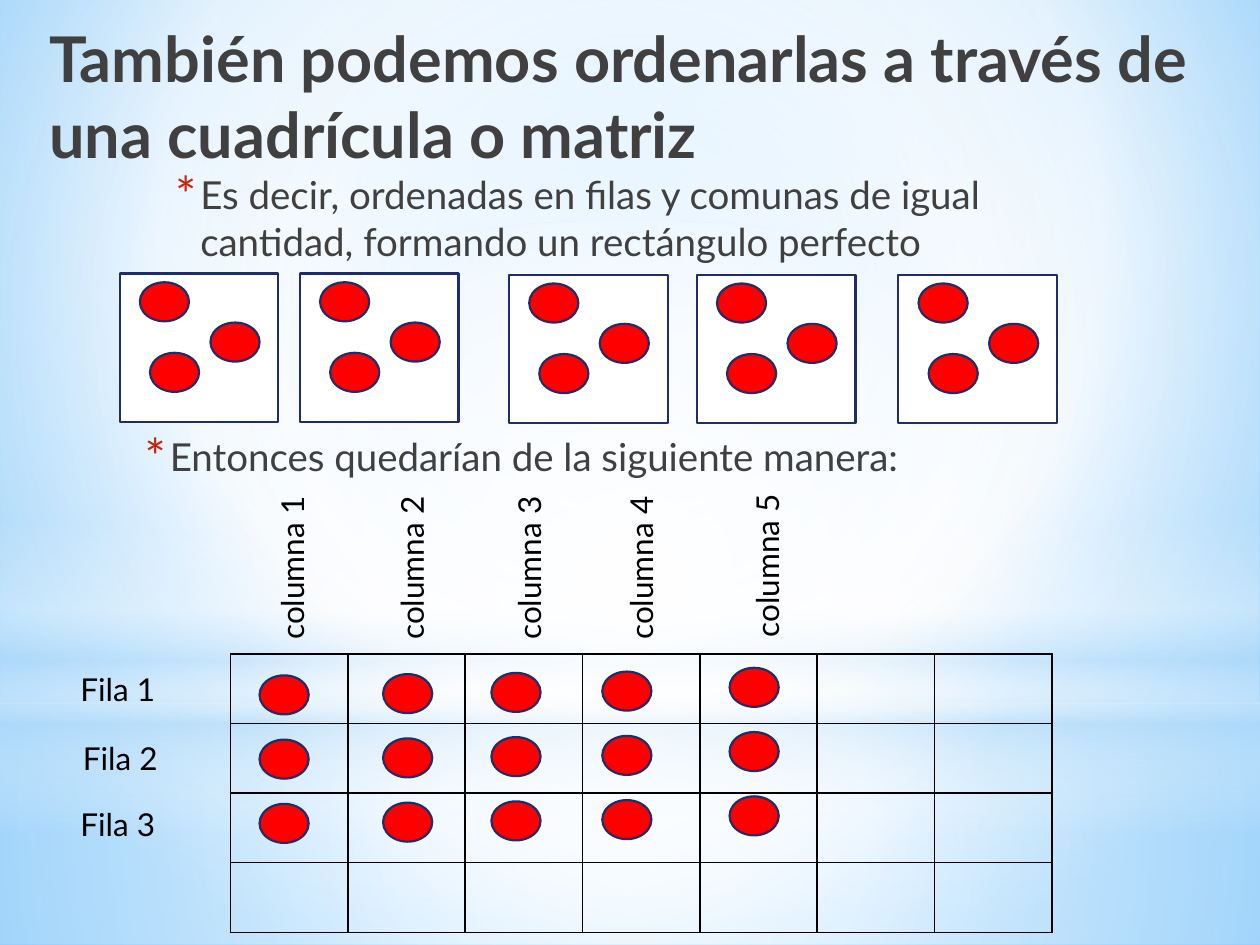
from lxml import etree
from pptx import Presentation
from pptx.dml.color import RGBColor
from pptx.enum.shapes import MSO_SHAPE
from pptx.enum.text import MSO_ANCHOR, MSO_AUTO_SIZE, PP_ALIGN
from pptx.oxml import parse_xml
from pptx.oxml.ns import nsdecls, qn
from pptx.util import Inches, Pt

RECTANGLE, OVAL = MSO_SHAPE.RECTANGLE, MSO_SHAPE.OVAL
TOP, MIDDLE = MSO_ANCHOR.TOP, MSO_ANCHOR.MIDDLE
NO_FIT = MSO_AUTO_SIZE.NONE
LEFT = PP_ALIGN.LEFT

THEME = {
    "font": "Lato", "title": 36, "body": 22, "label": 18,
    "text": "404040", "black": "000000", "bullet": "C3260C",
    "dot": "FF0000", "card": "FFFFFF", "outline": "1F2E69", "outline_width": 1.25,
}

TITLE = "También podemos ordenarlas a través de una cuadrícula o matriz"
INTRO = "Es decir, ordenadas en filas y comunas de igual cantidad, formando un rectángulo perfecto"
RESULT = "Entonces quedarían de la siguiente manera:"

# Gradient stops: position %, colour, opacity %
CENTRE = (50, 50, 50, 50)
BACKGROUND = ([(0, "9ED5FF", 100), (60, "FFFFFF", 100), (100, "5BB9FF", 100)], (20, 10, 20, 60))
BACKDROP = [
    (RECTANGLE, (0, 5.58, 10, 1.92),
     [(0, "FFFFFF", 91), (37, "FFFFFF", 76), (100, "B4DCFA", 79)], CENTRE),
    (RECTANGLE, (0, 0, 10, 5.58),
     [(0, "FFFFFF", 89), (48, "FFFFFF", 62), (100, "B4DCFA", 79)], CENTRE),
    (RECTANGLE, (0, 4.12, 10, 2.5),
     [(0, "FFFFFF", 0), (29, "FFFFFF", 30), (45, "B4DCFA", 40),
      (55, "FFFFFF", 26), (65, "B4DCFA", 60), (100, "FFFFFF", 0)], None),
    (OVAL, (0, 1.75, 10, 5.58), [(0, "FFFFFF", 100), (56, "FFFFFF", 0)], CENTRE),
]

CARD_SIZE = (1.26, 1.18)
CARDS = [(0.95, 2.17), (2.38, 2.17), (4.04, 2.18), (5.53, 2.18), (7.13, 2.18)]
DOTS_IN_CARD = [(0.16, 0.07), (0.72, 0.39), (0.24, 0.63)]
DOT_SIZE = (0.39, 0.31)

GRID_BOX = (1.83, 5.19, 6.52, 2.21)
GRID_ROWS, GRID_COLUMNS = 4, 7
DOT_COLUMNS = [(2.06, 5.36), (3.04, 5.35), (3.9, 5.34), (4.78, 5.33), (5.79, 5.3)]
DOT_ROW_STEP = 0.51
ROW_LABELS = [("Fila 1", 0.54, 5.27), ("Fila 2", 0.56, 5.82), ("Fila 3", 0.54, 6.34)]
COLUMN_LABELS = [
    ("columna 1", 1.59, 4.25), ("columna 2", 2.54, 4.25), ("columna 3", 3.47, 4.25),
    ("columna 4", 4.36, 4.25), ("columna 5", 5.36, 4.23),
]


def inches(box):
    return [Inches(length) for length in box]


def set_gradient(element, stops, focus):
    """Swap the element's solid fill for a circular gradient, or a vertical one without focus."""
    stop_xml = "".join(
        f'<a:gs pos="{position * 1000}"><a:srgbClr val="{color}">'
        f'<a:alpha val="{opacity * 1000}"/></a:srgbClr></a:gs>'
        for position, color, opacity in stops)
    if focus:
        sides = " ".join(f'{side}="{value * 1000}"' for side, value in zip("ltrb", focus))
        direction = f'<a:path path="circle"><a:fillToRect {sides}/></a:path>'
    else:
        direction = '<a:lin ang="5400000" scaled="0"/>'
    solid = element.find(".//" + qn("a:solidFill"))
    solid.getparent().replace(solid, parse_xml(
        f'<a:gradFill {nsdecls("a")} rotWithShape="1"><a:gsLst>{stop_xml}</a:gsLst>'
        f'{direction}</a:gradFill>'))


def add_backdrop(slide):
    slide.background.fill.solid()
    set_gradient(slide.background._cSld, *BACKGROUND)
    for layer, (kind, box, stops, focus) in enumerate(BACKDROP):
        shape = slide.shapes.add_shape(kind, *inches(box))
        shape.shadow.inherit = False
        shape.line.fill.background()
        shape.fill.solid()
        set_gradient(shape._element, stops, focus)
        slide.shapes._spTree.insert(2 + layer, shape._element)


def add_outlined(slide, kind, position, size, color):
    shape = slide.shapes.add_shape(kind, *inches(position + size))
    shape.shadow.inherit = False
    shape.fill.solid()
    shape.fill.fore_color.rgb = RGBColor.from_string(color)
    shape.line.color.rgb = RGBColor.from_string(THEME["outline"])
    shape.line.width = Pt(THEME["outline_width"])


def write(shape, box, text, size, color, anchor=TOP, bold=False):
    shape.left, shape.top, shape.width, shape.height = inches(box)
    frame = shape.text_frame
    frame.text = text
    frame.word_wrap = True
    frame.auto_size = NO_FIT
    frame.vertical_anchor = anchor
    paragraph = frame.paragraphs[0]
    paragraph.alignment = LEFT
    font = paragraph.font
    font.name, font.size, font.bold = THEME["font"], Pt(THEME[size]), bold
    font.color.rgb = RGBColor.from_string(THEME[color])
    return paragraph


def add_bullet(paragraph):
    paragraph.space_before = Pt(0.2 * THEME["body"])
    paragraph.space_after = Pt(3)
    properties = paragraph._p.get_or_add_pPr()
    properties.set("marL", str(Inches(0.25)))
    properties.set("indent", str(Inches(-0.2)))
    bullet = [
        f'<a:buClr {nsdecls("a")}><a:srgbClr val="{THEME["bullet"]}"/></a:buClr>',
        f'<a:buSzPct {nsdecls("a")} val="130000"/>',
        f'<a:buFont {nsdecls("a")} typeface="{THEME["font"]}"/>',
        f'<a:buChar {nsdecls("a")} char="*"/>',
    ]
    defaults = properties.find(qn("a:defRPr"))
    for xml in bullet:
        defaults.addprevious(parse_xml(xml))


def add_label(slide, text, box, rotation=0):
    label = slide.shapes.add_textbox(*inches(box))
    write(label, box, text, "label", "black")
    label.rotation = rotation


def add_grid(slide):
    table = slide.shapes.add_table(GRID_ROWS, GRID_COLUMNS, *inches(GRID_BOX)).table
    table.first_row = table.horz_banding = False
    for cell in table.iter_cells():
        properties = cell._tc.get_or_add_tcPr()
        for side in ("lnL", "lnR", "lnT", "lnB"):
            border = etree.SubElement(properties, qn(f"a:{side}"), w=str(Pt(1)))
            fill = etree.SubElement(border, qn("a:solidFill"))
            etree.SubElement(fill, qn("a:srgbClr"), val=THEME["black"])
        cell.fill.background()


def main():
    deck = Presentation()
    deck.slide_width, deck.slide_height = Inches(10), Inches(7.5)
    slide = deck.slides.add_slide(deck.slide_layouts[1])
    add_backdrop(slide)

    write(slide.shapes.title, (0.29, 0.13, 9.35, 1.25), TITLE, "title", "text", MIDDLE, True)
    add_bullet(write(slide.placeholders[1], (1.24, 1.31, 7, 3.8), INTRO, "body", "text"))
    result_box = (1, 3.39, 7, 0.71)
    result = slide.shapes.add_textbox(*inches(result_box))
    add_bullet(write(result, result_box, RESULT, "body", "text"))

    for left, top in CARDS:
        add_outlined(slide, RECTANGLE, (left, top), CARD_SIZE, THEME["card"])
        for across, down in DOTS_IN_CARD:
            add_outlined(slide, OVAL, (left + across, top + down), DOT_SIZE, THEME["dot"])

    add_grid(slide)
    for left, top in DOT_COLUMNS:
        for row in range(len(ROW_LABELS)):
            add_outlined(slide, OVAL, (left, top + row * DOT_ROW_STEP), DOT_SIZE, THEME["dot"])
    for text, left, top in ROW_LABELS:
        add_label(slide, text, (left, top, 1.05, 0.4))
    for text, left, top in COLUMN_LABELS:
        add_label(slide, text, (left, top, 1.45, 0.4), 270)

    deck.save("out.pptx")


if __name__ == "__main__":
    main()
